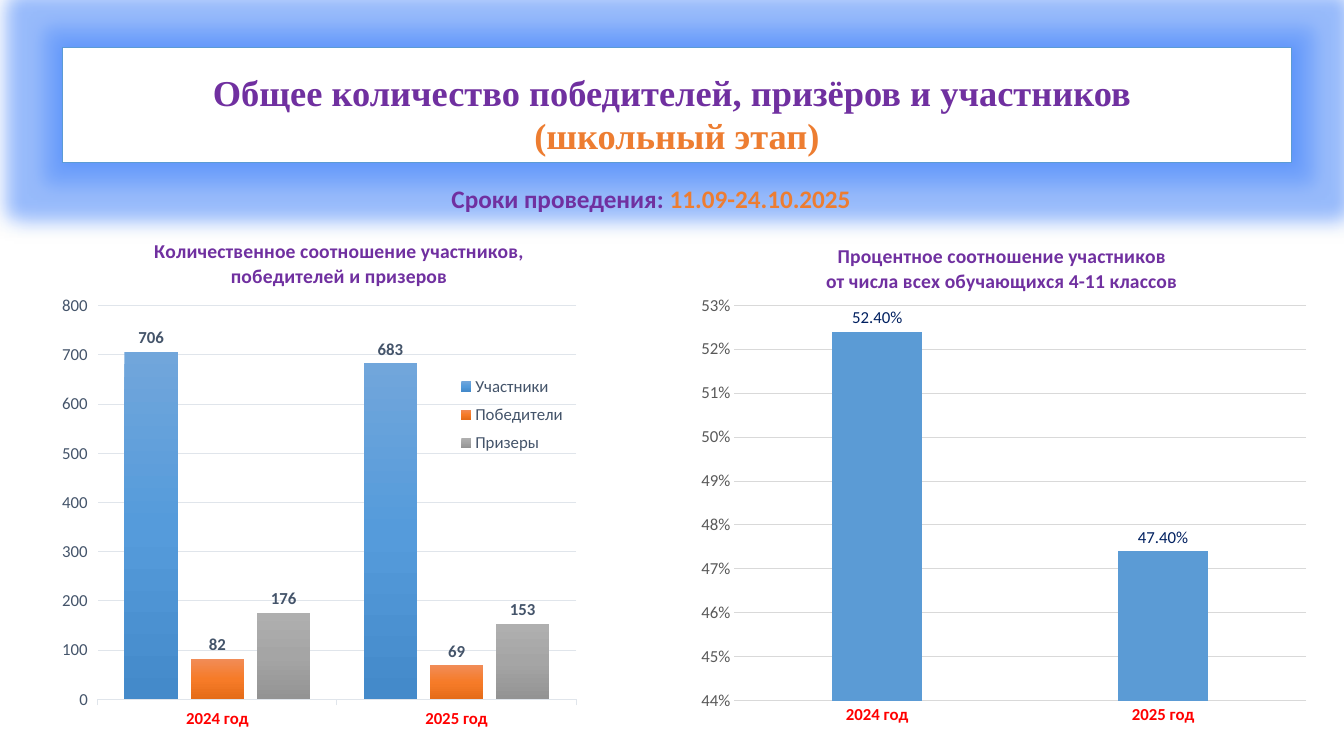
from dataclasses import dataclass
from typing import Optional

from lxml.etree import SubElement
from pptx import Presentation
from pptx.chart.data import CategoryChartData
from pptx.dml.color import RGBColor
from pptx.enum.chart import XL_CHART_TYPE as Kind
from pptx.enum.chart import XL_LABEL_POSITION as LabelPos
from pptx.enum.chart import XL_LEGEND_POSITION as LegendPos
from pptx.enum.chart import XL_TICK_MARK as Tick
from pptx.enum.shapes import MSO_SHAPE as Shape
from pptx.enum.text import MSO_ANCHOR as Anchor
from pptx.enum.text import PP_ALIGN as Align
from pptx.oxml.ns import qn
from pptx.util import Inches, Pt

PURPLE, ORANGE, BLUE, RED = "7030A0", "ED7D31", "5B9BD5", "FF0000"
SLATE, GLOW = "44546A", "4F8BFA"


@dataclass
class Series:
    name: str
    values: tuple[float, ...]
    colors: tuple[str, ...]


@dataclass
class Columns:
    box: tuple[float, float, float, float]
    title: tuple[str, ...]
    title_at: tuple[float, float]
    plot_at: tuple[float, float, float, float]
    series: list[Series]
    scale: tuple[float, float, float]
    axis_format: str
    label_format: str
    axis_color: str
    label_color: str
    label_bold: bool
    grid_color: str
    tick: Tick
    gap: int
    overlap: int
    legend_at: Optional[tuple[float, float, float, float]] = None


CHARTS = [
    Columns(
        (0.31, 2.23, 5.41, 5.09),
        ("Количественное соотношение участников,", "победителей и призеров"),
        (0.22, 0.02), (0.122, 0.158, 0.878, 0.767),
        [
            Series("Участники", (706, 683), ("71A6DB", "559BDB", "448ACA")),
            Series("Победители", (82, 69), ("F18C57", "F67B28", "E56C19")),
            Series("Призеры", (176, 153), ("AFAFAF", "A5A5A5", "939393")),
        ],
        (0, 800, 100), "General", "General", SLATE, SLATE, True, "E0E5EB",
        Tick.OUTSIDE, 100, -24, (0.765, 0.28, 0.235, 0.18),
    ),
    Columns(
        (6.81, 1.89, 6.15, 5.78),
        ("Процентное соотношение участников", "от числа всех обучающихся 4-11 классов"),
        (0.22, 0.085), (0.077, 0.197, 0.922, 0.679),
        [Series("Доля участников", (0.524, 0.474), (BLUE,))],
        (0.44, 0.53, 0.01), "0%", "0.00%", "595959", "002060", False, "D9D9D9",
        Tick.NONE, 219, -27,
    ),
]


def rgb(color: str) -> RGBColor:
    return RGBColor.from_string(color)


def style(font, size: float, color: str, bold: bool = False, name: str = "Calibri") -> None:
    font.size, font.bold, font.name = Pt(size), bold, name
    font.color.rgb = rgb(color)


def add_run(p, text: str, size: float, color: str, name: str = "Calibri") -> None:
    r = p.add_run()
    r.text = text
    style(r.font, size, color, True, name)


def add_halo(sp) -> None:
    sp.shadow.inherit = False
    effects = sp._element.spPr.find(qn("a:effectLst"))
    for tag, key, radius, alpha in (("a:glow", "rad", 0.38, 50),
                                    ("a:outerShdw", "blurRad", 0.13, 70)):
        effect = SubElement(effects, qn(tag), {key: str(Inches(radius))})
        color = SubElement(effect, qn("a:srgbClr"), val=GLOW)
        SubElement(color, qn("a:alpha"), val=str(alpha * 1000))


def place(parent, at: tuple[float, ...], inner: bool = False) -> None:
    layout = parent.find(qn("c:layout"))
    if layout is None:
        layout = SubElement(parent, qn("c:layout"))
        parent.insert(0, layout)
    manual = SubElement(layout, qn("c:manualLayout"))
    if inner:
        SubElement(manual, qn("c:layoutTarget"), val="inner")
    for key in ("xMode", "yMode"):
        SubElement(manual, qn(f"c:{key}"), val="edge")
    for key, value in zip("xywh", at):
        SubElement(manual, qn(f"c:{key}"), val=str(value))


def fill_series(ser, colors: tuple[str, ...]) -> None:
    ser.invert_if_negative = False
    fill = ser.format.fill
    if len(colors) == 1:
        fill.solid()
        fill.fore_color.rgb = rgb(colors[0])
        return
    fill.gradient()
    fill.gradient_angle = 270
    stops = ser._element.spPr.find(qn("a:gradFill")).find(qn("a:gsLst"))
    for stop in list(stops):
        stops.remove(stop)
    for i, color in enumerate(colors):
        stop = SubElement(stops, qn("a:gs"), pos=str(i * 100000 // (len(colors) - 1)))
        SubElement(stop, qn("a:srgbClr"), val=color)


def add_columns(s, spec: Columns) -> None:
    data = CategoryChartData()
    data.categories = ["2024 год", "2025 год"]
    for item in spec.series:
        data.add_series(item.name, item.values)
    box = [Inches(v) for v in spec.box]
    chart = s.shapes.add_chart(Kind.COLUMN_CLUSTERED, *box, data).chart
    style(chart.font, 10, "000000")

    chart.has_title = True
    tf = chart.chart_title.text_frame
    for i, line in enumerate(spec.title):
        p = tf.add_paragraph() if i else tf.paragraphs[0]
        p.alignment = Align.CENTER
        add_run(p, line, 14, PURPLE)
    place(chart.chart_title._element, spec.title_at)

    plot = chart.plots[0]
    plot.gap_width, plot.overlap = spec.gap, spec.overlap
    plot.vary_by_categories = False
    place(chart._chartSpace.chart.plotArea, spec.plot_at, inner=True)
    for ser, item in zip(plot.series, spec.series):
        fill_series(ser, item.colors)
    plot.has_data_labels = True
    labels = plot.data_labels
    labels.show_value, labels.position = True, LabelPos.OUTSIDE_END
    labels.number_format, labels.number_format_is_linked = spec.label_format, False
    style(labels.font, 12, spec.label_color, spec.label_bold)

    cat, val = chart.category_axis, chart.value_axis
    style(cat.tick_labels.font, 12, RED, True)
    style(val.tick_labels.font, 12, spec.axis_color)
    cat.major_tick_mark = val.major_tick_mark = spec.tick
    val.minimum_scale, val.maximum_scale, val.major_unit = spec.scale
    val.tick_labels.number_format = spec.axis_format
    val.tick_labels.number_format_is_linked = False
    val.format.line.fill.background()
    for line in (cat.format.line, val.major_gridlines.format.line):
        line.color.rgb = rgb(spec.grid_color)
        line.width = Pt(0.75)

    chart.has_legend = spec.legend_at is not None
    if spec.legend_at:
        chart.legend.position = LegendPos.RIGHT
        chart.legend.include_in_layout = False
        style(chart.legend.font, 12, SLATE)
        place(chart.legend._element, spec.legend_at)


def add_heading(s) -> None:
    sp = s.shapes.add_shape(Shape.RECTANGLE, Inches(0.62), Inches(0.47),
                            Inches(12.19), Inches(1.14))
    sp.fill.solid()
    sp.fill.fore_color.rgb = rgb("FFFFFF")
    sp.line.color.rgb = rgb(BLUE)
    sp.line.width = Pt(1)
    add_halo(sp)
    tf = sp.text_frame
    tf.word_wrap, tf.vertical_anchor = True, Anchor.MIDDLE
    tf.margin_top, tf.margin_bottom = Inches(0.17), 0
    lines = (("Общее количество победителей, призёров и участников ", PURPLE),
             ("(школьный этап)", ORANGE))
    for i, (text, color) in enumerate(lines):
        p = tf.add_paragraph() if i else tf.paragraphs[0]
        p.alignment = Align.CENTER
        add_run(p, text, 26, color, "Times New Roman")


def add_dates(s) -> None:
    tf = s.shapes.add_textbox(Inches(4.38), Inches(1.77), Inches(4.67), Inches(0.4)).text_frame
    tf.word_wrap = True
    p = tf.paragraphs[0]
    add_run(p, "Сроки проведения: ", 18, PURPLE)
    add_run(p, "11.09-24.10.2025", 18, ORANGE)


def main() -> None:
    prs = Presentation()
    prs.slide_width, prs.slide_height = Inches(13.33), Inches(7.5)
    s = prs.slides.add_slide(prs.slide_layouts[6])
    add_heading(s)
    for spec in CHARTS:
        add_columns(s, spec)
    add_dates(s)
    prs.save("out.pptx")


if __name__ == "__main__":
    main()
